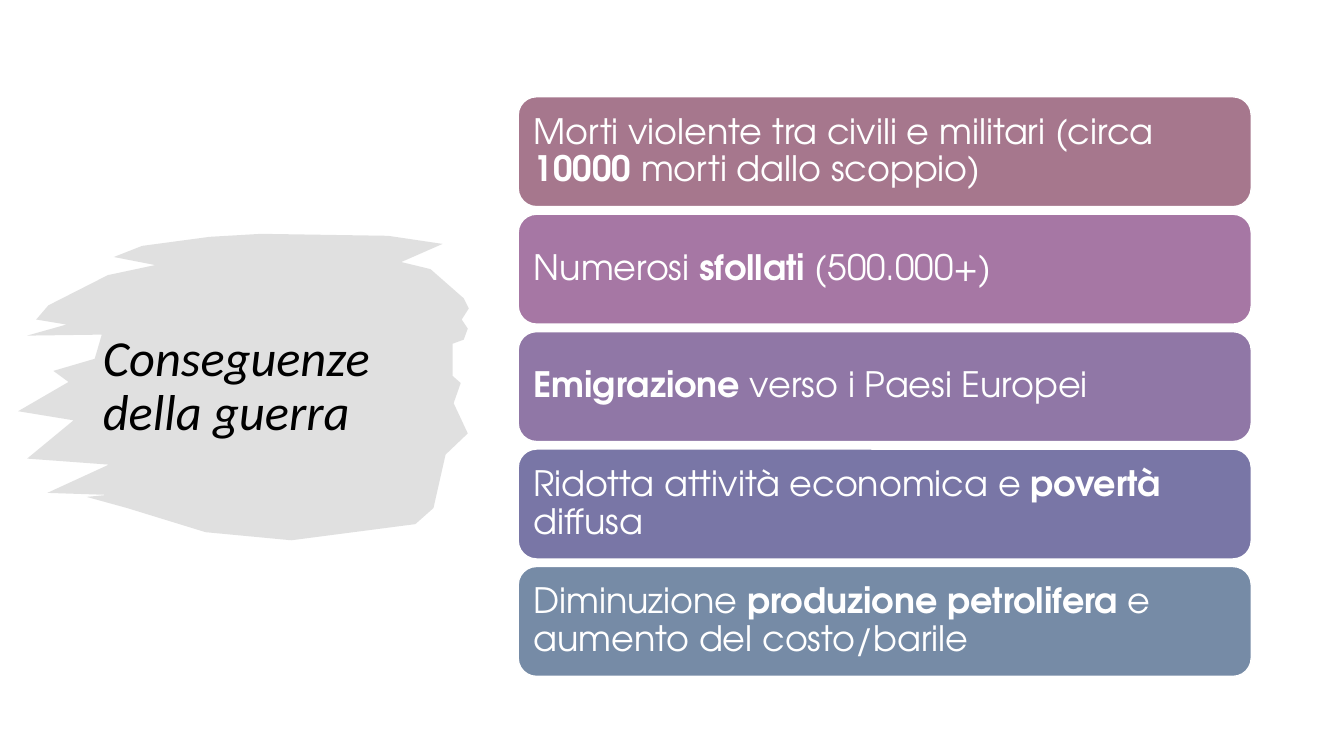
from lxml.etree import SubElement
from pptx import Presentation
from pptx.dml.color import RGBColor
from pptx.enum.shapes import MSO_SHAPE
from pptx.enum.text import MSO_ANCHOR, MSO_AUTO_SIZE, PP_ALIGN
from pptx.oxml.ns import qn
from pptx.util import Inches, Pt

BODY_FONT = "TeX Gyre Adventor"

# Brush outline in hundredths of an inch, clockwise from the top.
BRUSH = [
    (259, 232), (385, 234), (439, 242), (398, 260), (427, 267), (460, 296),
    (465, 306), (458, 317), (464, 326), (460, 337), (449, 341), (449, 373),
    (457, 380), (450, 400), (464, 430), (442, 451), (430, 504), (412, 520),
    (289, 536), (204, 528), (126, 504), (86, 493), (107, 491), (47, 489),
    (108, 461), (27, 455), (73, 417), (18, 408), (68, 379), (53, 368),
    (94, 356), (101, 332), (27, 333), (66, 322), (36, 317), (48, 303),
    (107, 273), (154, 263), (113, 255), (141, 244), (208, 235),
]

# Each card: fill colour and text, with the bold part between asterisks.
CARDS = [
    ("A6778D", "Morti violente tra civili e militari (circa "
               "*10000* morti dallo scoppio)"),
    ("A677A4", "Numerosi *sfollati* (500.000+)"),
    ("9077A6", "*Emigrazione* verso i Paesi Europei"),
    ("7976A6", "Ridotta attività economica e *povertà* diffusa"),
    ("768BA6", "Diminuzione *produzione petrolifera* e aumento del "
               "costo/barile"),
]


def color(hex_value):
    return RGBColor.from_string(hex_value)


def fill_shape(shape, hex_value):
    shape.shadow.inherit = False
    shape.fill.solid()
    shape.fill.fore_color.rgb = color(hex_value)


def style_span(span, font, size, hex_value, bold=False, italic=False):
    span.font.name = font
    span.font.size = Pt(size)
    span.font.color.rgb = color(hex_value)
    span.font.bold = bold
    span.font.italic = italic


def add_brush(slide):
    """Draw the translucent grey brush stroke behind the title."""
    builder = slide.shapes.build_freeform(*BRUSH[0], scale=Inches(0.01))
    builder.add_line_segments(BRUSH[1:], close=True)
    brush = builder.convert_to_shape()
    fill_shape(brush, "D9D9D9")
    brush.line.fill.background()
    fill_color = brush._element.spPr.find(qn("a:solidFill"))[0]
    SubElement(fill_color, qn("a:alpha")).set("val", "80000")


def place_title(slide, text):
    """Format the title and bring it in front of the brush stroke."""
    title = slide.shapes.title
    title.left, title.top = Inches(0.92), Inches(1.64)
    title.width, title.height = Inches(3.52), Inches(4.4)
    frame = title.text_frame
    frame.text = text
    frame.word_wrap = True
    frame.auto_size = MSO_AUTO_SIZE.NONE
    frame.vertical_anchor = MSO_ANCHOR.MIDDLE
    para = frame.paragraphs[0]
    para.alignment = PP_ALIGN.LEFT
    para.line_spacing = 0.9
    style_span(para.runs[0], "Calibri", 36, "000000", italic=True)
    slide.shapes._spTree.append(title._element)


def add_card(slide, top, fill, text):
    card = slide.shapes.add_shape(
        MSO_SHAPE.ROUNDED_RECTANGLE,
        Inches(5.14), Inches(top), Inches(7.27), Inches(1.09))
    fill_shape(card, fill)
    card.line.color.rgb = color("FFFFFF")
    card.line.width = Pt(1)
    frame = card.text_frame
    frame.word_wrap = True
    frame.vertical_anchor = MSO_ANCHOR.MIDDLE
    frame.margin_left = frame.margin_right = Inches(0.1)
    frame.margin_top = frame.margin_bottom = Inches(0.1)
    para = frame.paragraphs[0]
    para.alignment = PP_ALIGN.LEFT
    para.line_spacing = 0.9
    for index, part in enumerate(text.split("*")):
        if part:
            span = para.add_run()
            span.text = part
            style_span(span, BODY_FONT, 25, "FFFFFF", bold=index % 2 == 1)


def main():
    deck = Presentation()
    deck.slide_width, deck.slide_height = Inches(13.33), Inches(7.5)
    slide = deck.slides.add_slide(deck.slide_layouts[5])
    add_brush(slide)
    place_title(slide, "Conseguenze della guerra")
    first_top, last_top = 0.96, 5.62
    pitch = (last_top - first_top) / (len(CARDS) - 1)
    for index, (fill, text) in enumerate(CARDS):
        add_card(slide, first_top + index * pitch, fill, text)
    deck.save("out.pptx")


if __name__ == "__main__":
    main()
